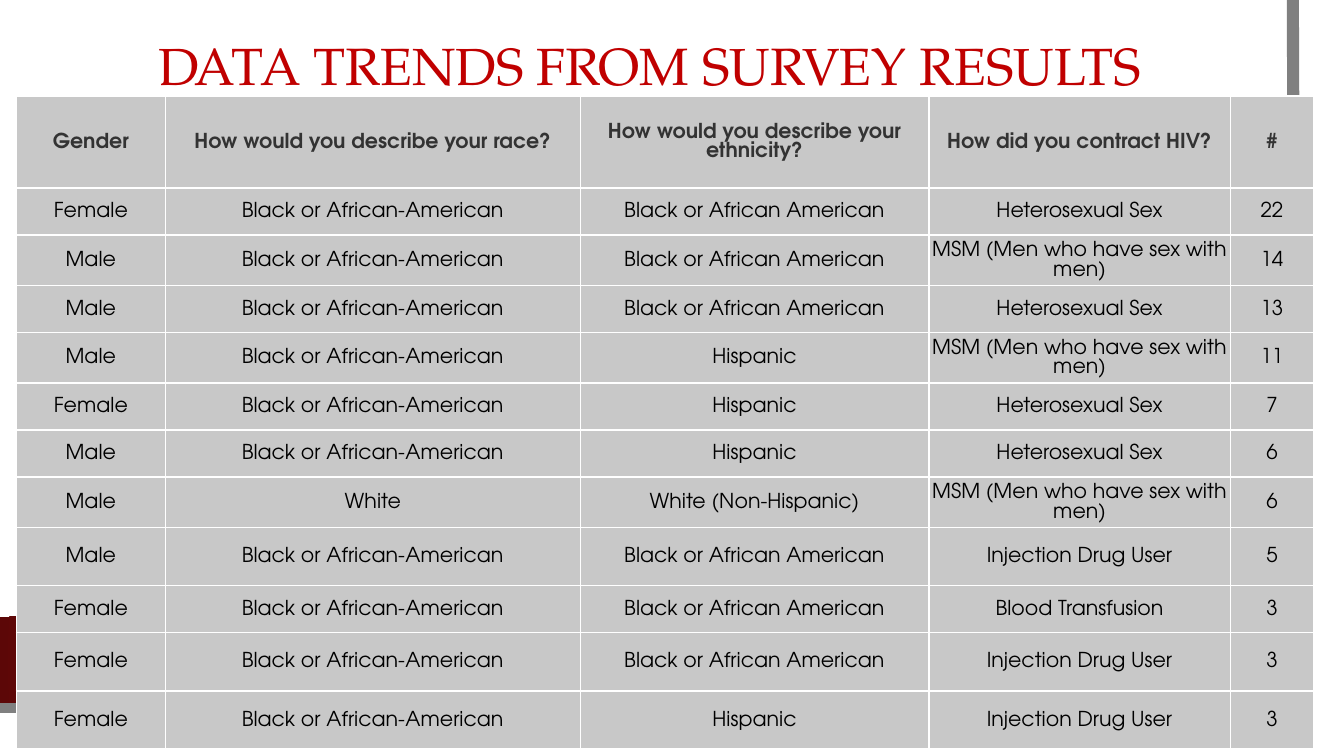
from typing import NamedTuple

import lxml.etree
import pptx
import pptx.dml.color
import pptx.enum.shapes
import pptx.enum.text
import pptx.oxml
import pptx.oxml.ns
import pptx.util

Pt = pptx.util.Pt
MIDDLE = pptx.enum.text.MSO_ANCHOR.MIDDLE
CENTER = pptx.enum.text.PP_ALIGN.CENTER
NS = pptx.oxml.ns.nsdecls("a")

TITLE_FONT = "TeX Gyre Pagella"
TABLE_FONT = "TeX Gyre Adventor"


class Box(NamedTuple):
    left: float
    top: float
    width: float
    height: float

    def emu(self) -> list:
        return [Pt(v) for v in self]


class Answer(NamedTuple):
    gender: str
    race: str
    ethnicity: str
    route: str
    count: str
    height: float = 25.1


BLACK_RACE = "Black or African-American"
BLACK_ETHNICITY = "Black or African American"
HETERO = "Heterosexual Sex"
MSM = "MSM (Men who have sex with men)"
DRUGS = "Injection Drug User"
TWO_LINES, TALL = 27.2, 31.2

ANSWERS = [
    Answer("Gender", "How would you describe your race?", "How would you describe your ethnicity?",
           "How did you contract HIV?", "#", 49.2),
    Answer("Female", BLACK_RACE, BLACK_ETHNICITY, HETERO, "22"),
    Answer("Male", BLACK_RACE, BLACK_ETHNICITY, MSM, "14", TWO_LINES),
    Answer("Male", BLACK_RACE, BLACK_ETHNICITY, HETERO, "13"),
    Answer("Male", BLACK_RACE, "Hispanic", MSM, "11", TWO_LINES),
    Answer("Female", BLACK_RACE, "Hispanic", HETERO, "7"),
    Answer("Male", BLACK_RACE, "Hispanic", HETERO, "6"),
    Answer("Male", "White", "White (Non-Hispanic)", MSM, "6", TWO_LINES),
    Answer("Male", BLACK_RACE, BLACK_ETHNICITY, DRUGS, "5", TALL),
    Answer("Female", BLACK_RACE, BLACK_ETHNICITY, "Blood Transfusion", "3"),
    Answer("Female", BLACK_RACE, BLACK_ETHNICITY, DRUGS, "3", TALL),
    Answer("Female", BLACK_RACE, "Hispanic", DRUGS, "3", TALL),
]
COLUMN_WIDTHS = [79.8, 222.4, 186.6, 161.7, 44.4]


def rgb(color: str) -> pptx.dml.color.RGBColor:
    return pptx.dml.color.RGBColor.from_string(color)


def format_text(p, font: str, size: float, color: str, bold: bool = False) -> None:
    p.alignment = CENTER
    for r in p.runs:
        r.font.name = font
        r.font.size = Pt(size)
        r.font.bold = bold
        r.font.color.rgb = rgb(color)


def add_rect(s, box: Box, color: str):
    sp = s.shapes.add_shape(pptx.enum.shapes.MSO_SHAPE.RECTANGLE, *box.emu())
    sp.shadow.inherit = False
    sp.fill.solid()
    sp.fill.fore_color.rgb = rgb(color)
    sp.line.fill.background()
    return sp


def set_radial_gradient(sp, inner: str, outer: str) -> None:
    solid = sp.fill._xPr.find(pptx.oxml.ns.qn("a:solidFill"))
    gradient = pptx.oxml.parse_xml(
        f'<a:gradFill {NS} rotWithShape="1"><a:gsLst>'
        f'<a:gs pos="34000"><a:srgbClr val="{inner}"/></a:gs>'
        f'<a:gs pos="100000"><a:srgbClr val="{outer}"/></a:gs></a:gsLst>'
        '<a:path path="circle"><a:fillToRect l="50000" t="50000" r="50000" b="50000"/></a:path>'
        '</a:gradFill>')
    solid.getparent().replace(solid, gradient)


def add_frame_line(s, points: list[tuple[float, float]], color: str, width: float) -> None:
    start, *rest = [(Pt(x), Pt(y)) for x, y in points]
    builder = s.shapes.build_freeform(*start)
    builder.add_line_segments(rest, close=False)
    sp = builder.convert_to_shape()
    sp.shadow.inherit = False
    sp.fill.background()
    sp.line.color.rgb = rgb(color)
    sp.line.width = Pt(width)
    lxml.etree.SubElement(sp.line._get_or_add_ln(), pptx.oxml.ns.qn("a:miter"), lim="800000")


def add_title(s, box: Box, text: str) -> None:
    tf = s.shapes.add_textbox(*box.emu()).text_frame
    tf.word_wrap = True
    tf.vertical_anchor = MIDDLE
    tf.text = text
    format_text(tf.paragraphs[0], TITLE_FONT, 28, "C00000")


def set_borders(cell, color: str, width: float) -> None:
    tc_pr = cell._tc.get_or_add_tcPr()
    for side in ("lnL", "lnR", "lnT", "lnB"):
        tc_pr.append(pptx.oxml.parse_xml(
            f'<a:{side} {NS} w="{Pt(width)}"><a:solidFill><a:srgbClr val="{color}"/>'
            f'</a:solidFill></a:{side}>'))


def fill_cell(cell, text: str, header: bool) -> None:
    set_borders(cell, "FFFFFF", 1)
    cell.fill.solid()
    cell.fill.fore_color.rgb = rgb("C8C8C8")
    cell.vertical_anchor = MIDDLE
    cell.margin_left = cell.margin_right = cell.margin_top = Pt(0.7)
    cell.margin_bottom = 0
    cell.text_frame.text = text
    format_text(cell.text_frame.paragraphs[0], TABLE_FONT, 11, "333333" if header else "000000", header)


def add_answer_table(s, left: float, top: float) -> None:
    box = Box(left, top, sum(COLUMN_WIDTHS), sum(a.height for a in ANSWERS))
    table = s.shapes.add_table(len(ANSWERS), len(COLUMN_WIDTHS), *box.emu()).table
    for column, width in zip(table.columns, COLUMN_WIDTHS):
        column.width = Pt(width)
    for i, (row, answer) in enumerate(zip(table.rows, ANSWERS)):
        row.height = Pt(answer.height)
        for cell, text in zip(row.cells, answer[:5]):
            fill_cell(cell, text, header=i == 0)


def main() -> None:
    prs = pptx.Presentation()
    prs.slide_width, prs.slide_height = Pt(720), Pt(405)
    s = prs.slides.add_slide(prs.slide_layouts[6])
    add_rect(s, Box(0, 0, 707.8, 392.4), "FFFFFF")
    add_frame_line(s, [(692.6, 0), (694.1, 379.4), (-1.4, 378.7)], "808080", 6.5)
    band = add_rect(s, Box(0, 330.5, 691.2, 46.1), "5C0707")
    set_radial_gradient(band, "B80E0F", "5C0707")
    add_title(s, Box(65.5, 14.4, 565.2, 41), "DATA TRENDS FROM SURVEY RESULTS")
    add_answer_table(s, 8.8, 51.5)
    prs.save("out.pptx")


if __name__ == "__main__":
    main()
